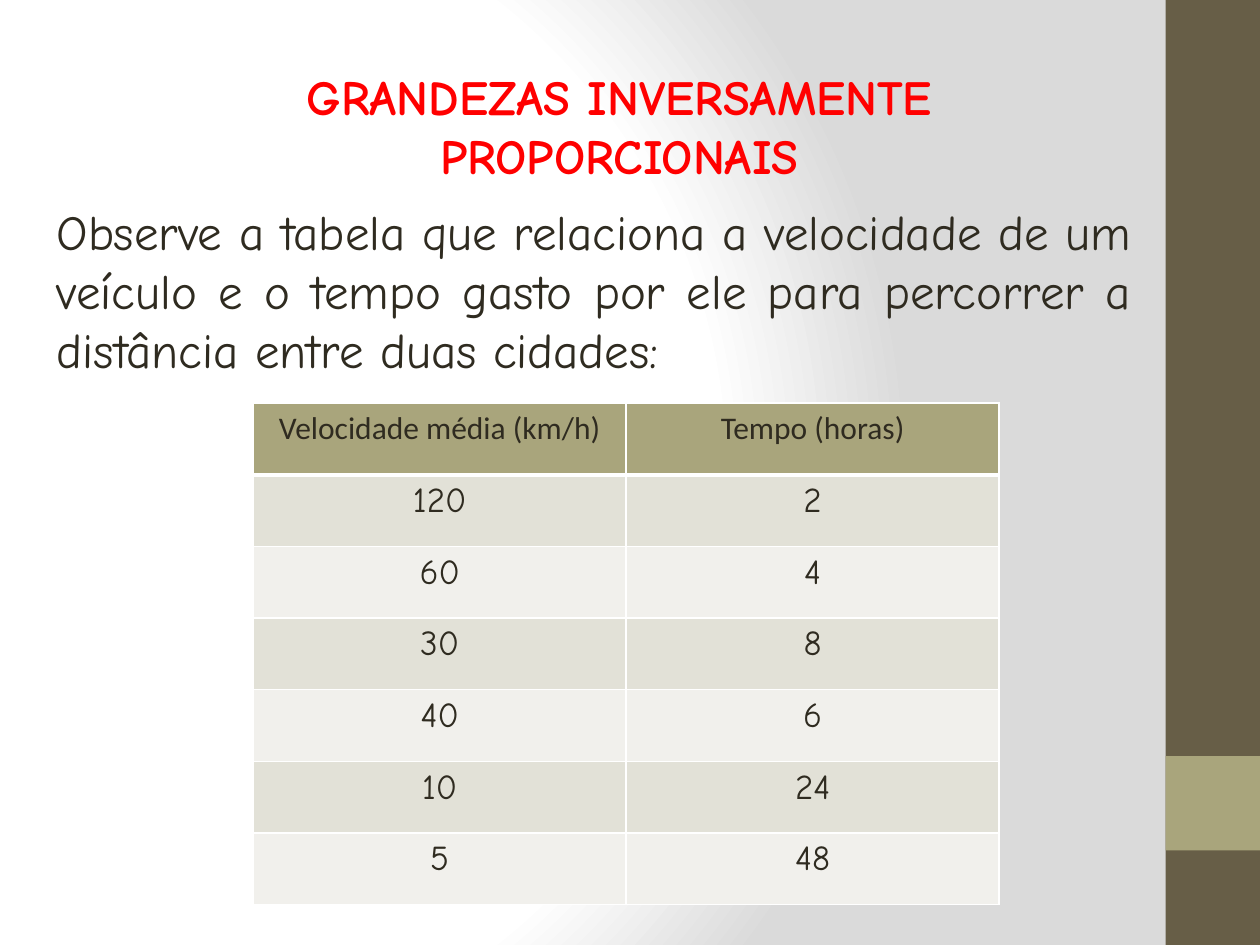
import pptx
import pptx.util
import pptx.dml.color
import pptx.enum.shapes
import pptx.enum.text
import pptx.oxml
import pptx.oxml.ns

RGBColor = pptx.dml.color.RGBColor
Inches = pptx.util.Inches
ALIGN = pptx.enum.text.PP_ALIGN

WIDTH, HEIGHT = Inches(10), Inches(7.5)
RED = RGBColor(0xFF, 0x00, 0x00)
INK = RGBColor(0x2F, 0x2B, 0x20)
BROWN = RGBColor(0x67, 0x5E, 0x47)
OLIVE = RGBColor(0xA9, 0xA5, 0x7C)
BANDS = (RGBColor(0xF1, 0xF0, 0xEC), RGBColor(0xE2, 0xE1, 0xD7))
WHITE = RGBColor(0xFF, 0xFF, 0xFF)
GREY = RGBColor(0xDA, 0xDA, 0xDA)
NS = pptx.oxml.ns.nsdecls("a", "p")

TITLE = {"name": "Comic Neue", "size": 28, "bold": True, "color": RED}
BODY = {"name": "Comic Neue", "size": 28, "bold": False, "color": INK}
HEAD = {"name": "Calibri", "size": 18, "bold": False, "color": INK}
CELL = {"name": "Comic Neue", "size": 20, "bold": False, "color": INK}

ROWS = [
    ("Velocidade média (km/h)", "Tempo (horas)"),
    ("120", "2"),
    ("60", "4"),
    ("30", "8"),
    ("40", "6"),
    ("10", "24"),
    ("5", "48"),
]


def write(tf, text, align, style):
    p = tf.paragraphs[0]
    p.alignment = align
    p.space_before = pptx.util.Pt(0)
    r = p.add_run()
    r.text = text
    for key, value in style.items():
        if key == "color":
            r.font.color.rgb = value
        else:
            setattr(r.font, key, pptx.util.Pt(value) if key == "size" else value)
    return p


def set_background(s):
    stops = "".join(
        f'<a:gs pos="{pos * 1000}"><a:srgbClr val="{color}"/></a:gs>'
        for pos, color in ((0, WHITE), (75, WHITE), (100, GREY))
    )
    s.background.fill.solid()
    bg_pr = s.element.find(".//" + pptx.oxml.ns.qn("p:bgPr"))
    grad = pptx.oxml.parse_xml(
        f'<a:gradFill {NS} rotWithShape="1"><a:gsLst>{stops}</a:gsLst>'
        '<a:path path="circle"><a:fillToRect l="20000" t="50000" '
        'r="100000" b="50000"/></a:path></a:gradFill>'
    )
    bg_pr.replace(bg_pr[0], grad)


def add_bar(s, top, height, color):
    left = 0.925
    sp = s.shapes.add_shape(
        pptx.enum.shapes.MSO_SHAPE.RECTANGLE,
        int(WIDTH * left), int(HEIGHT * top),
        int(WIDTH * (1 - left)), int(HEIGHT * height),
    )
    sp.shadow.inherit = False
    sp.fill.solid()
    sp.fill.fore_color.rgb = color
    sp.line.fill.background()


def fill_placeholder(sp, box, text, align, style):
    for key, value in zip(("left", "top", "width", "height"), box):
        setattr(sp, key, Inches(value))
    tf = sp.text_frame
    tf.word_wrap = True
    tf.auto_size = pptx.enum.text.MSO_AUTO_SIZE.SHAPE_TO_FIT_TEXT
    tf.vertical_anchor = pptx.enum.text.MSO_ANCHOR.TOP
    return write(tf, text, align, style)


def remove_bullet(p):
    p_pr = p._p.get_or_add_pPr()
    p_pr.set("marL", "0")
    p_pr.set("indent", "0")
    p_pr.append(pptx.oxml.parse_xml(f"<a:buNone {NS}/>"))


def set_borders(cell, bottom):
    tc_pr = cell._tc.get_or_add_tcPr()
    for side, width in (("L", 1), ("R", 1), ("T", 1), ("B", bottom)):
        tc_pr.append(pptx.oxml.parse_xml(
            f'<a:ln{side} {NS} w="{pptx.util.Pt(width)}"><a:solidFill>'
            f'<a:srgbClr val="{WHITE}"/></a:solidFill></a:ln{side}>'
        ))


def add_table(s, left, top, width, height):
    table = s.shapes.add_table(
        len(ROWS), len(ROWS[0]),
        Inches(left), Inches(top), Inches(width), Inches(height),
    ).table
    for i, row in enumerate(ROWS):
        for j, text in enumerate(row):
            cell = table.cell(i, j)
            cell.margin_left = cell.margin_right = Inches(0.07)
            set_borders(cell, 1 if i else 3)
            cell.fill.solid()
            cell.fill.fore_color.rgb = BANDS[i % 2] if i else OLIVE
            write(cell.text_frame, text, ALIGN.CENTER, CELL if i else HEAD)


def main():
    prs = pptx.Presentation()
    prs.slide_width, prs.slide_height = WIDTH, HEIGHT
    s = prs.slides.add_slide(prs.slide_layouts[1])
    set_background(s)
    add_bar(s, 0, 1, BROWN)
    add_bar(s, 0.8, 0.1, OLIVE)
    fill_placeholder(
        s.shapes.title, (0.95, 0.48, 7.93, 1.04),
        "GRANDEZAS INVERSAMENTE PROPORCIONAIS", ALIGN.CENTER, TITLE,
    )
    p = fill_placeholder(
        s.placeholders[1], (0.35, 1.55, 8.73, 1.51),
        "Observe a tabela que relaciona a velocidade de um veículo e o tempo "
        "gasto por ele para percorrer a distância entre duas cidades:",
        ALIGN.JUSTIFY, BODY,
    )
    remove_bullet(p)
    add_table(s, 2.01, 3.2, 5.92, 3.98)
    prs.save("out.pptx")


if __name__ == "__main__":
    main()
